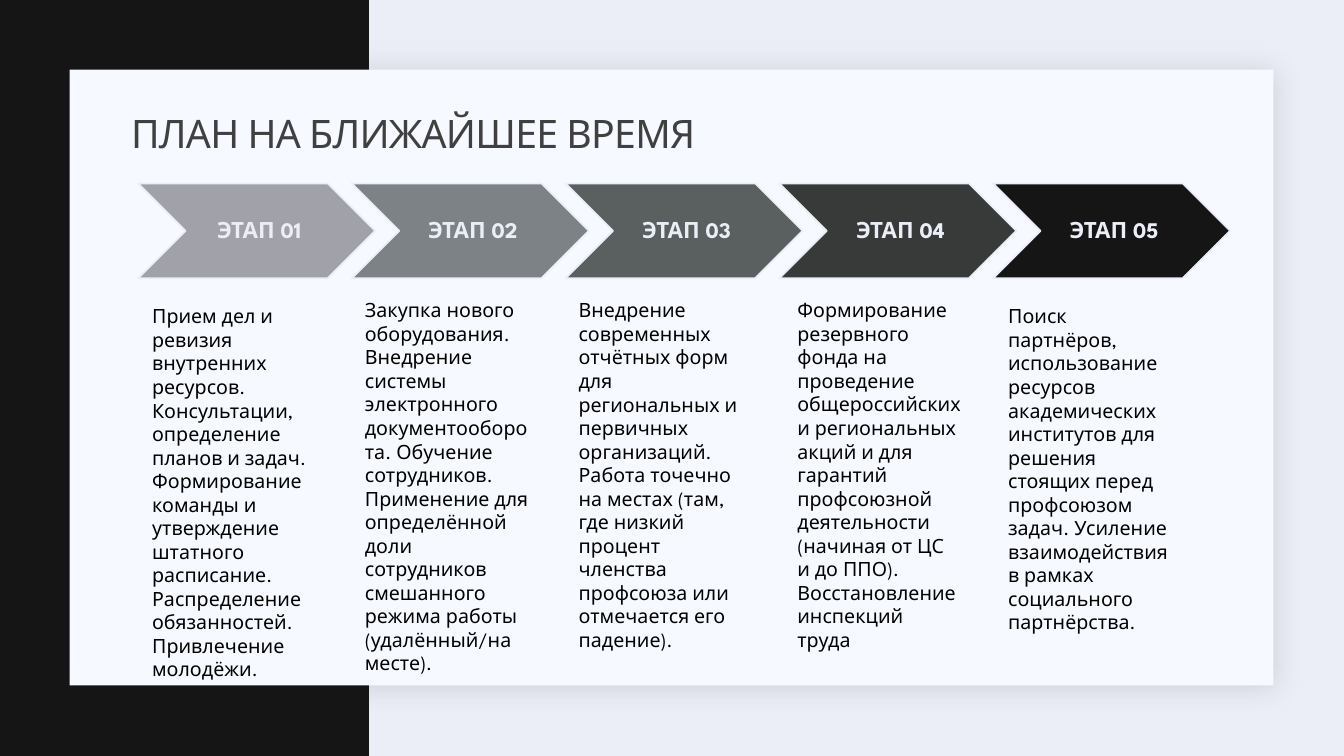
from lxml import etree
from pptx import Presentation
from pptx.dml.color import RGBColor
from pptx.enum.shapes import MSO_SHAPE
from pptx.enum.text import MSO_ANCHOR, MSO_AUTO_SIZE, PP_ALIGN
from pptx.oxml.ns import qn
from pptx.util import Inches, Pt

RECTANGLE, CHEVRON = MSO_SHAPE.RECTANGLE, MSO_SHAPE.CHEVRON
MIDDLE, CENTER, LEFT = MSO_ANCHOR.MIDDLE, PP_ALIGN.CENTER, PP_ALIGN.LEFT
NO_AUTOFIT = MSO_AUTO_SIZE.NONE

FONT = "League Spartan"
COLORS = {
    "background": "ECEEF7",
    "band": "141514",
    "panel": "F6F9FF",
    "shadow": "1F2125",
    "title": "404040",
    "text": "000000",
}
TITLE = "ПЛАН НА БЛИЖАЙШЕЕ ВРЕМЯ"
STAGES = [
    ("ЭТАП 01", "A1A2A9", (1.41, 2.97, 1.88, 3.87), [
        "Прием дел и ревизия внутренних ресурсов.",
        "Консультации, определение планов и задач.",
        "Формирование команды и утверждение штатного расписание. "
        "Распределение обязанностей. Привлечение молодёжи.",
    ]),
    ("ЭТАП 02", "7C8286", (3.52, 2.91, 1.88, 3.77), [
        "Закупка нового оборудования.",
        "Внедрение системы электронного документооборота. Обучение сотрудников. "
        "Применение для определённой доли сотрудников смешанного режима работы "
        "(удалённый/на месте).",
    ]),
    ("ЭТАП 03", "5A6060", (5.64, 2.91, 1.86, 3.69), [
        "Внедрение современных отчётных форм для региональных и первичных "
        "организаций. Работа точечно на местах (там, где низкий процент членства "
        "профсоюза или отмечается его падение).",
    ]),
    ("ЭТАП 04", "373A39", (7.81, 2.91, 1.82, 3.83), [
        "Формирование резервного фонда на проведение общероссийских и региональных "
        "акций и для гарантий профсоюзной деятельности (начиная от ЦС и до ППО). "
        "Восстановление инспекций труда",
    ]),
    ("ЭТАП 05", "141514", (9.9, 2.97, 1.82, 3.64), [
        "Поиск партнёров, использование ресурсов академических институтов для "
        "решения стоящих перед профсоюзом задач. Усиление взаимодействия в рамках "
        "социального партнёрства.",
    ]),
]
CHEVRON_LEFT, CHEVRON_TOP, CHEVRON_STEP = 1.37, 1.82, 2.12
CHEVRON_WIDTH, CHEVRON_HEIGHT = 2.35, 0.94


def add_filled(slide, kind, box, color):
    shape = slide.shapes.add_shape(kind, *map(Inches, box))
    shape.shadow.inherit = False
    shape.fill.solid()
    shape.fill.fore_color.rgb = RGBColor.from_string(color)
    shape.line.fill.background()
    return shape


def add_soft_shadow(shape):
    effects = shape._element.spPr.find(qn("a:effectLst"))
    shadow = etree.SubElement(effects, qn("a:outerShdw"), blurRad=str(Pt(20)),
                              dist=str(Pt(2)), dir="2700000", rotWithShape="0")
    color = etree.SubElement(shadow, qn("a:srgbClr"), val=COLORS["shadow"])
    etree.SubElement(color, qn("a:alpha"), val="15000")


def write(frame, lines, size, color, align=LEFT, bold=False, spacing=None):
    frame.word_wrap = True
    frame.auto_size = NO_AUTOFIT
    for index, line in enumerate(lines):
        paragraph = frame.add_paragraph() if index else frame.paragraphs[0]
        paragraph.text = line
        paragraph.alignment = align
        paragraph.line_spacing = spacing
        font = paragraph.font
        font.name, font.size, font.bold = FONT, Pt(size), bold
        font.color.rgb = RGBColor.from_string(color)


def add_title(slide):
    title = slide.shapes.title
    title.left, title.top, title.width, title.height = map(Inches, (1.2, 1.03, 11, 0.64))
    frame = title.text_frame
    frame.vertical_anchor = MIDDLE
    write(frame, [TITLE], 28, COLORS["title"], spacing=0.9)
    frame.paragraphs[0].runs[0]._r.get_or_add_rPr().set("spc", "-50")
    slide.shapes._spTree.append(title._element)


def add_stage(slide, index, label, color, box, lines):
    left = CHEVRON_LEFT + index * CHEVRON_STEP
    chevron = add_filled(slide, CHEVRON,
                         (left, CHEVRON_TOP, CHEVRON_WIDTH, CHEVRON_HEIGHT), color)
    chevron.line.color.rgb = RGBColor.from_string(COLORS["background"])
    chevron.line.width = Pt(1.25)
    frame = chevron.text_frame
    frame.vertical_anchor = MIDDLE
    frame.margin_left = Inches(0.07)
    frame.margin_right = frame.margin_top = frame.margin_bottom = Inches(0.02)
    write(frame, [label], 16, COLORS["background"], CENTER, True, 0.9)
    description = slide.shapes.add_textbox(*map(Inches, box))
    write(description.text_frame, lines, 14, COLORS["text"])


def main():
    presentation = Presentation()
    presentation.slide_width, presentation.slide_height = Inches(13.33), Inches(7.5)
    slide = presentation.slides.add_slide(presentation.slide_layouts[5])
    slide.background.fill.solid()
    slide.background.fill.fore_color.rgb = RGBColor.from_string(COLORS["background"])
    add_filled(slide, RECTANGLE, (0, 0, 3.66, 7.5), COLORS["band"])
    panel = add_filled(slide, RECTANGLE, (0.69, 0.69, 11.94, 6.11), COLORS["panel"])
    add_soft_shadow(panel)
    add_title(slide)
    for index, stage in enumerate(STAGES):
        add_stage(slide, index, *stage)
    presentation.save("out.pptx")


if __name__ == "__main__":
    main()
